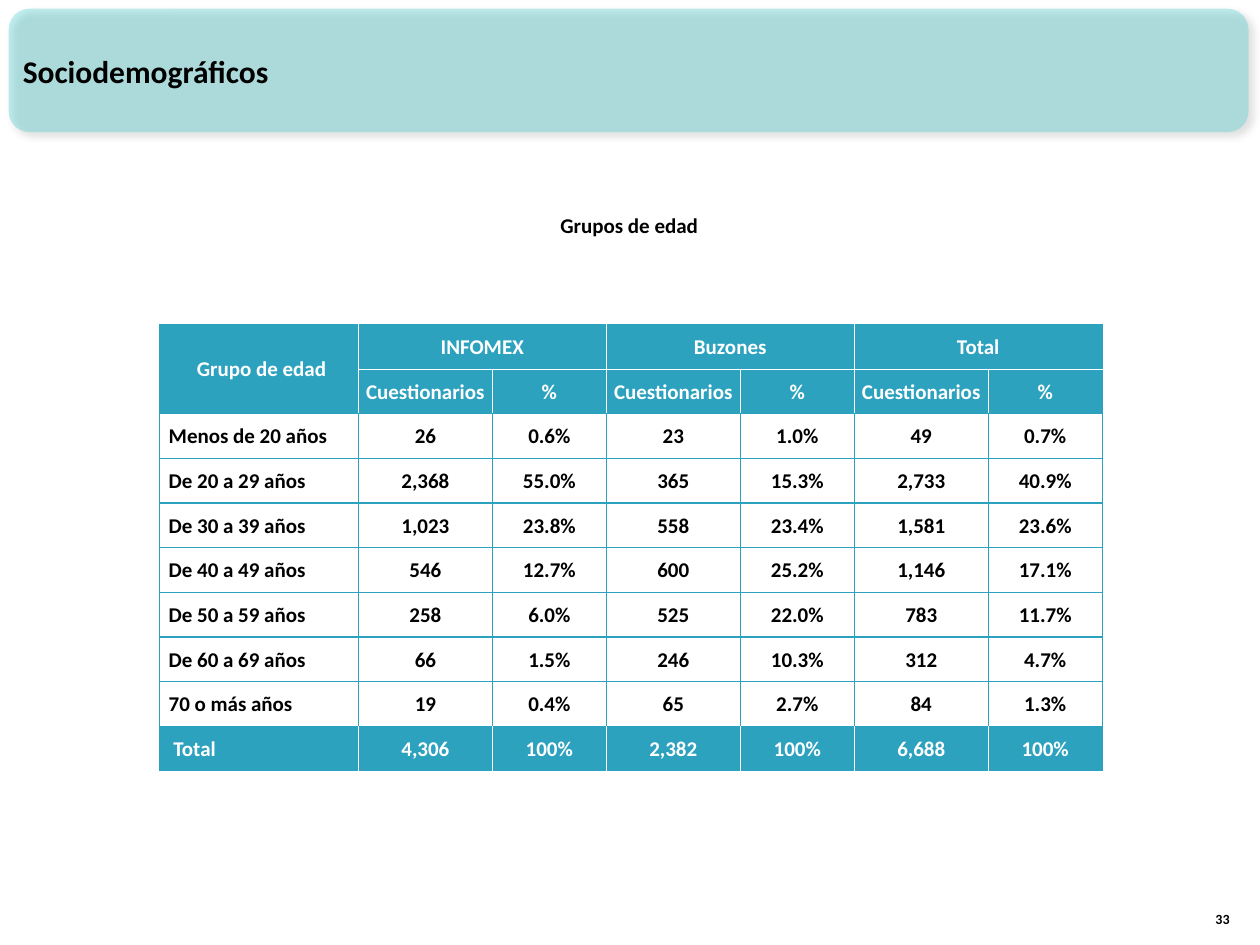
from lxml.etree import SubElement
from pptx import Presentation
from pptx.dml.color import RGBColor
from pptx.enum.shapes import MSO_SHAPE
from pptx.enum.text import MSO_ANCHOR as ANCHOR, PP_ALIGN as ALIGN
from pptx.oxml import parse_xml
from pptx.oxml.ns import nsdecls, qn
from pptx.util import Pt

COLORS = {"aqua": "33CCCC", "teal": "2DA2BF", "white": "FFFFFF", "black": "000000"}


def put_text(tf, text, size=12, color="black", align=ALIGN.CENTER, indent=0):
    tf.word_wrap = True
    p = tf.paragraphs[0]
    p.alignment = align
    if indent:
        p._p.get_or_add_pPr().set("marL", str(Pt(indent)))
    r = p.add_run()
    r.text = text
    r.font.name = "Calibri"
    r.font.size = Pt(size)
    r.font.bold = True
    r.font.color.rgb = RGBColor.from_string(COLORS[color])


def set_border(cell, side, color):
    ln = SubElement(cell._tc.get_or_add_tcPr(), qn(f"a:ln{side}"), w=str(Pt(0.75)))
    fill = SubElement(ln, qn("a:solidFill"))
    SubElement(fill, qn("a:srgbClr"), val=COLORS[color])


prs = Presentation()
prs.slide_width, prs.slide_height = Pt(720), Pt(540)
s = prs.slides.add_slide(prs.slide_layouts[5])

# Title
title = s.shapes.title
title.left, title.top, title.width, title.height = Pt(5.8), Pt(6.5), Pt(660), Pt(68)
title.text_frame.vertical_anchor = ANCHOR.MIDDLE
put_text(title.text_frame, "Sociodemográficos", size=18, align=ALIGN.LEFT)

# Translucent banner behind the title
banner = s.shapes.add_shape(MSO_SHAPE.ROUNDED_RECTANGLE, Pt(5), Pt(5), Pt(708.5), Pt(70.5))
banner.fill.solid()
banner.fill.fore_color.rgb = RGBColor.from_string(COLORS["aqua"])
color_xml = banner.element.spPr.find(qn("a:solidFill"))[0]
SubElement(color_xml, qn("a:alpha"), val="30000")
banner.line.fill.background()
banner.element.spPr.append(parse_xml(
    f'<a:effectLst {nsdecls("a")}><a:outerShdw blurRad="{Pt(4)}" dist="{Pt(3)}" '
    f'dir="2700000" algn="tl" rotWithShape="0"><a:srgbClr val="{COLORS["black"]}">'
    '<a:alpha val="40000"/></a:srgbClr></a:outerShdw></a:effectLst>'))
title.element.addprevious(banner.element)

# Table heading and page number
heading = s.shapes.add_textbox(Pt(58.3), Pt(118), Pt(602.6), Pt(21.8))
put_text(heading.text_frame, "Grupos de edad")
number = s.shapes.add_textbox(Pt(681), Pt(504.7), Pt(28.8), Pt(28.8))
number.text_frame.vertical_anchor = ANCHOR.BOTTOM
put_text(number.text_frame, "33", size=8, align=ALIGN.RIGHT)

# Age group table
rows = [
    ["Grupo de edad", "INFOMEX", "", "Buzones", "", "Total", ""],
    [""] + ["Cuestionarios", "%"] * 3,
    ["Menos de 20 años", "26", "0.6%", "23", "1.0%", "49", "0.7%"],
    ["De 20 a 29 años", "2,368", "55.0%", "365", "15.3%", "2,733", "40.9%"],
    ["De 30 a 39 años", "1,023", "23.8%", "558", "23.4%", "1,581", "23.6%"],
    ["De 40 a 49 años", "546", "12.7%", "600", "25.2%", "1,146", "17.1%"],
    ["De 50 a 59 años", "258", "6.0%", "525", "22.0%", "783", "11.7%"],
    ["De 60 a 69 años", "66", "1.5%", "246", "10.3%", "312", "4.7%"],
    ["70 o más años", "19", "0.4%", "65", "2.7%", "84", "1.3%"],
    ["Total", "4,306", "100%", "2,382", "100%", "6,688", "100%"],
]
widths = [113.4] + [76.6, 65.1] * 3
row_height = 25.53
last_row, last_col = len(rows) - 1, len(widths) - 1
table = s.shapes.add_table(len(rows), len(widths), Pt(91.4), Pt(185.4),
                           Pt(sum(widths)), Pt(row_height * len(rows))).table
table.first_row = table.horz_banding = False
for col, width in zip(table.columns, widths):
    col.width = Pt(width)
for row in table.rows:
    row.height = Pt(row_height)

table.cell(0, 0).merge(table.cell(1, 0))
for c in (1, 3, 5):
    table.cell(0, c).merge(table.cell(0, c + 1))

for i, values in enumerate(rows):
    filled = i in (0, 1, last_row)
    inner = "white" if filled else "teal"
    for j, text in enumerate(values):
        cell = table.cell(i, j)
        if cell.is_spanned:
            continue
        end = j + cell.span_width - 1
        set_border(cell, "L", inner if j > 0 else "teal")
        set_border(cell, "R", inner if end < last_col else "teal")
        set_border(cell, "T", "white" if i == 1 else "teal")
        set_border(cell, "B", "white" if i == 0 and j > 0 else "teal")
        if filled:
            cell.fill.solid()
            cell.fill.fore_color.rgb = RGBColor.from_string(COLORS["teal"])
        else:
            cell.fill.background()
        cell.margin_left = cell.margin_right = cell.margin_top = Pt(0.7)
        cell.margin_bottom = Pt(0)
        cell.vertical_anchor = ANCHOR.MIDDLE
        label = j == 0 and i > 0
        indent = 0 if j else 2.7 if i == 0 else 7 if i == last_row else 4.3
        put_text(cell.text_frame, text, color="white" if filled else "black",
                 align=ALIGN.LEFT if label else ALIGN.CENTER, indent=indent)

prs.save("out.pptx")
